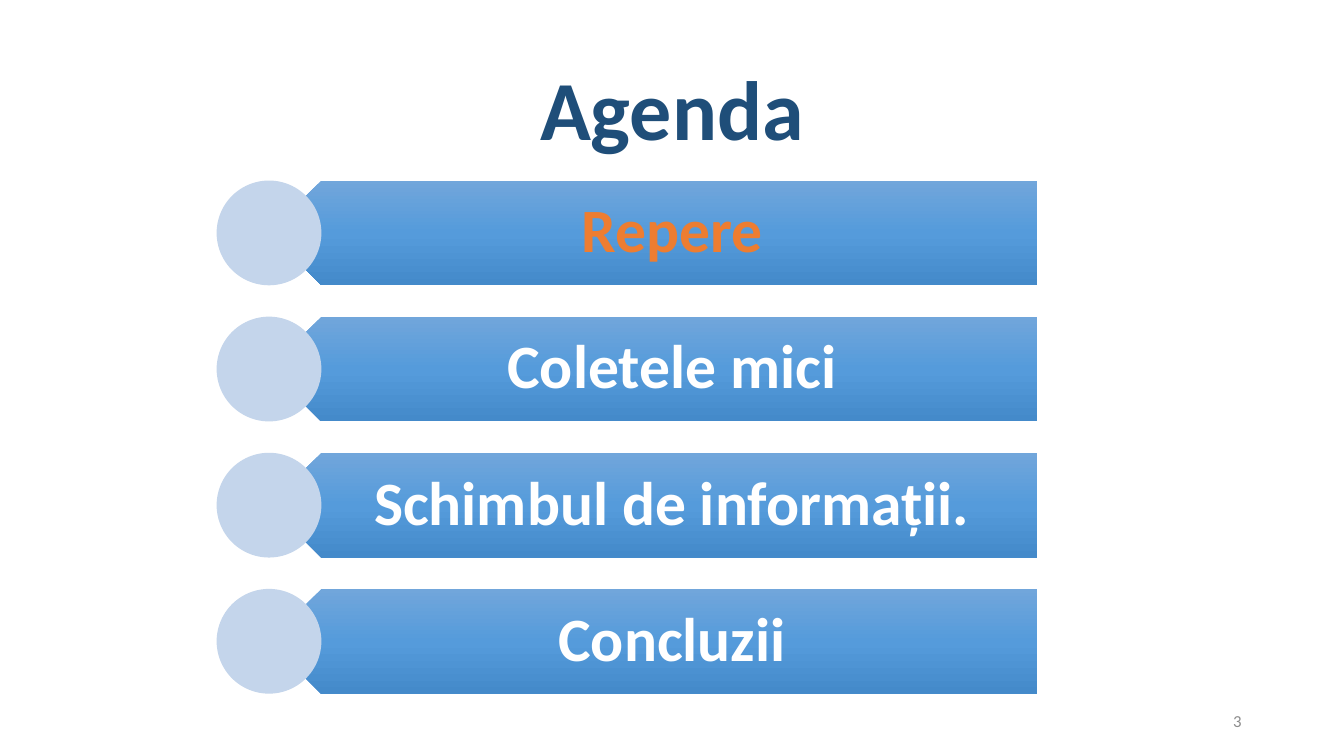
from copy import deepcopy
from pptx import Presentation
from pptx.dml.color import RGBColor
from pptx.enum.shapes import MSO_SHAPE
from pptx.enum.text import MSO_ANCHOR, PP_ALIGN
from pptx.oxml.ns import qn
from pptx.util import Cm, Pt

COLORS = {
    "title": "1F4E79",
    "number": "8C8C8C",
    "current": "ED7D31",
    "item": "FFFFFF",
    "circle": "C4D5EB",
    "bar_top": "71A6DB",
    "bar_middle": "559BDB",
    "bar_bottom": "448ACA",
}
BAR_STOPS = [(0, "bar_top"), (0.5, "bar_middle"), (1, "bar_bottom")]
ITEMS = [
    ("Repere", "current"),
    ("Coletele mici", "item"),
    ("Schimbul de informații.", "item"),
    ("Concluzii", "item"),
]
FIRST_TOP, PITCH, BAR_HEIGHT = 4.55, 3.43, 2.64


def add_text(page, text, left, top, width, height, size, color, align, bold=True):
    box = page.shapes.add_textbox(Cm(left), Cm(top), Cm(width), Cm(height))
    frame = box.text_frame
    frame.word_wrap = True
    frame.vertical_anchor = MSO_ANCHOR.MIDDLE
    para = frame.paragraphs[0]
    para.text = text
    para.alignment = align
    para.line_spacing = 0.9 if bold else 1.0
    para.font.name = "Calibri"
    para.font.size = Pt(size)
    para.font.bold = bold
    para.font.color.rgb = RGBColor.from_string(COLORS[color])
    return frame


def add_plain_shape(page, kind, left, top, width, height):
    shape = page.shapes.add_shape(kind, Cm(left), Cm(top), Cm(width), Cm(height))
    shape.shadow.inherit = False
    shape.line.fill.background()
    return shape


deck = Presentation()
deck.slide_width, deck.slide_height = Cm(33.87), Cm(19.05)
page = deck.slides.add_slide(deck.slide_layouts[6])

add_text(page, "Agenda", 2.33, 1.01, 29.21, 3.68, 60, "title", PP_ALIGN.CENTER)
add_text(page, "3", 23.92, 17.66, 7.62, 1.01, 12, "number", PP_ALIGN.RIGHT, bold=False)

for index, (label, color) in enumerate(ITEMS):
    top = FIRST_TOP + index * PITCH

    bar = add_plain_shape(page, MSO_SHAPE.PENTAGON, 6.78, top, 19.35, BAR_HEIGHT)
    bar.rotation = 180
    bar.fill.gradient()
    bar.fill.gradient_angle = 270
    gradient = bar.element.spPr.find(qn("a:gradFill"))
    gradient.set("rotWithShape", "0")
    stops = gradient.find(qn("a:gsLst"))
    stops.append(deepcopy(stops[0]))
    for stop, (position, name) in zip(bar.fill.gradient_stops, BAR_STOPS):
        stop.position = position
        stop.color.rgb = RGBColor.from_string(COLORS[name])

    frame = add_text(page, label, 7.44, top, 18.69, BAR_HEIGHT, 44, color, PP_ALIGN.CENTER)
    frame.margin_left, frame.margin_right = Cm(1.17), Cm(0.86)
    frame.margin_top = frame.margin_bottom = Cm(0.46)

    circle = add_plain_shape(page, MSO_SHAPE.OVAL, 5.46, top, BAR_HEIGHT, BAR_HEIGHT)
    circle.fill.solid()
    circle.fill.fore_color.rgb = RGBColor.from_string(COLORS["circle"])

deck.save("out.pptx")
